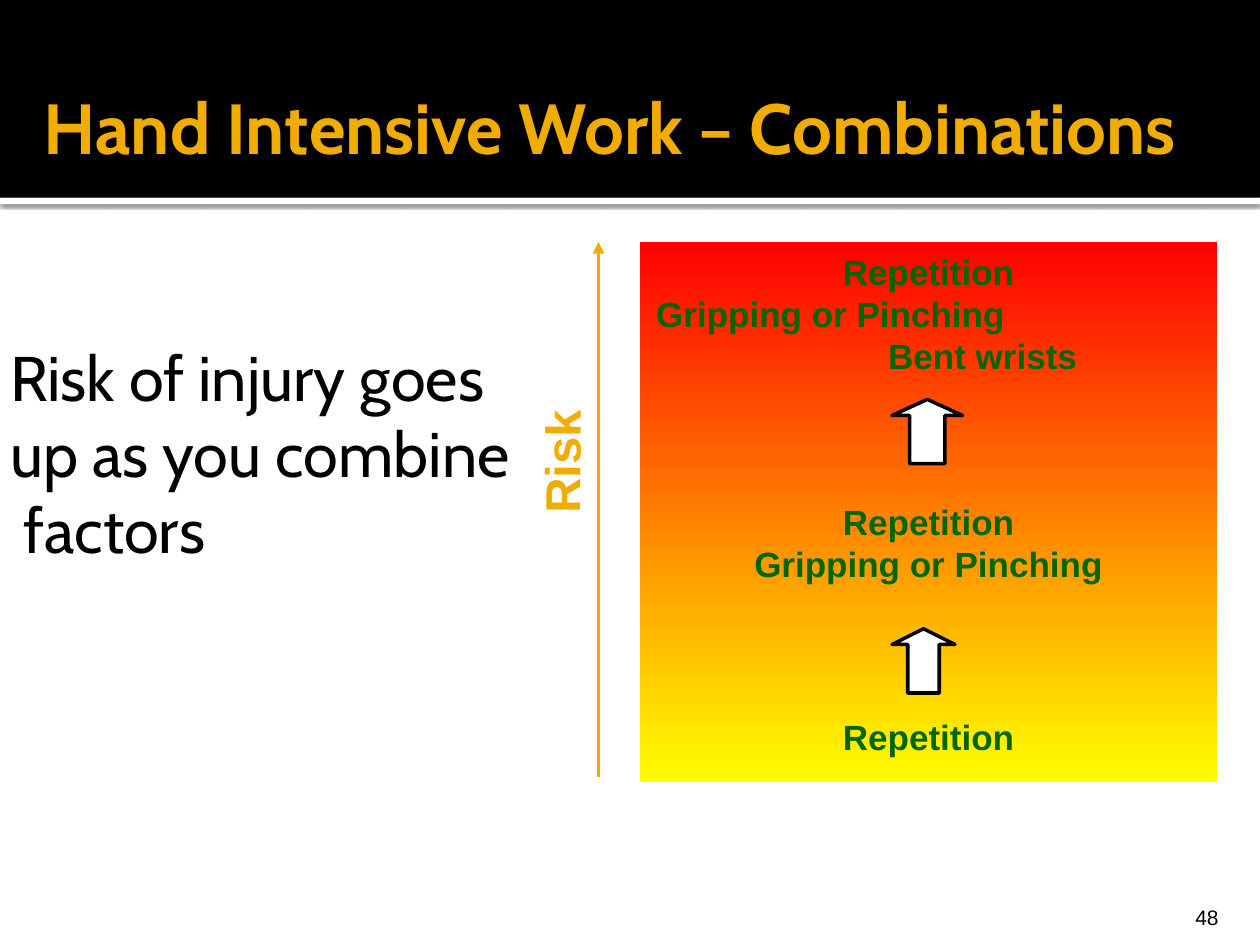
from pptx import Presentation
from pptx.dml.color import RGBColor
from pptx.enum.shapes import MSO_CONNECTOR, MSO_SHAPE
from pptx.enum.text import MSO_ANCHOR, PP_ALIGN
from pptx.oxml import parse_xml
from pptx.oxml.ns import nsdecls
from pptx.util import Inches, Pt

BLACK = RGBColor(0, 0, 0)
WHITE = RGBColor(255, 255, 255)
GOLD = RGBColor(0xF0, 0xAD, 0x00)
GREEN = RGBColor(0x00, 0x66, 0x00)
RED = RGBColor(255, 0, 0)
YELLOW = RGBColor(255, 255, 0)
LEFT, MID, RIGHT = PP_ALIGN.LEFT, PP_ALIGN.CENTER, PP_ALIGN.RIGHT

# Content: a line is (text, alignment, left indent in inches)
TITLE = [("Hand Intensive Work – Combinations", LEFT, 0)]
BODY = [("Risk of injury goes up as you combine", LEFT, 0),
        ("factors", LEFT, 0.11)]
RISK = [("Risk", MID, 0)]
NUMBER = [("48", RIGHT, 0)]
PANEL = (5.08, 1.92, 4.58, 4.29)
LEVELS = [  # top, lines
    (1.99, [("Repetition", MID, 0),
            ("Gripping or Pinching", LEFT, 0.03),
            ("Bent wrists", LEFT, 1.87)]),
    (3.97, [("Repetition", MID, 0), ("Gripping or Pinching", MID, 0)]),
    (5.68, [("Repetition", MID, 0)]),
]
STEPS = [(7.08, 4.99, 0.5, 0.51), (7.08, 3.17, 0.56, 0.51)]

prs = Presentation()
prs.slide_width, prs.slide_height = Inches(10), Inches(7.5)
slide = prs.slides.add_slide(prs.slide_layouts[6])
shapes = slide.shapes


def add_text(lines, box, size, color, font="Arial", bold=False, pitch=None,
             anchor=MSO_ANCHOR.TOP, pads=(0.1, 0.05, 0.1, 0.05), turn=0):
    item = shapes.add_textbox(*map(Inches, box))
    item.rotation = turn
    frame = item.text_frame
    frame.word_wrap = True
    frame.vertical_anchor = anchor
    (frame.margin_left, frame.margin_top,
     frame.margin_right, frame.margin_bottom) = map(Inches, pads)
    for i, (text, align, indent) in enumerate(lines):
        para = frame.add_paragraph() if i else frame.paragraphs[0]
        para.alignment = align
        if pitch:
            para.line_spacing = Pt(pitch)
        if indent:
            para._p.get_or_add_pPr().set("marL", str(Inches(indent)))
        run = para.add_run()
        run.text = text
        run.font.name, run.font.size, run.font.bold = font, Pt(size), bold
        run.font.color.rgb = color


def add_block(kind, box, fill, line=None):
    item = shapes.add_shape(kind, *map(Inches, box))
    item.shadow.inherit = False
    item.fill.solid()
    item.fill.fore_color.rgb = fill
    if line is None:
        item.line.fill.background()
    else:
        item.line.color.rgb, item.line.width = line, Pt(2)
    return item


# Header band with a shadowed white strip
strip = add_block(MSO_SHAPE.RECTANGLE, (0, 1.57, 10, 0.05), WHITE)
strip._element.spPr.find("{*}effectLst").append(parse_xml(
    f'<a:outerShdw {nsdecls("a")} blurRad="{Pt(2.5)}" dist="{Pt(0.8)}" '
    'dir="5400000" algn="tl" rotWithShape="0"><a:srgbClr val="000000">'
    '<a:alpha val="60000"/></a:srgbClr></a:outerShdw>'))
add_block(MSO_SHAPE.RECTANGLE, (0, 0, 10, 1.57), BLACK)
add_text(TITLE, (0.25, 0.67, 9.5, 0.67), 40.5, GOLD, font="Cabin", bold=True,
         anchor=MSO_ANCHOR.MIDDLE, pads=(0.1, 0.05, 0.05, 0.05))

# Slide number and body
add_text(NUMBER, (8.97, 7.08, 0.8, 0.3), 12, BLACK,
         anchor=MSO_ANCHOR.BOTTOM, pads=(0.1, 0.05, 0.1, 0))
add_text(BODY, (0.02, 2.59, 4.16, 3.83), 36, BLACK, font="Cabin",
         pads=(0.06, 0.1, 0.1, 0.05))

# Risk panel, red at the top
panel = add_block(MSO_SHAPE.RECTANGLE, PANEL, RED)
panel.fill.gradient()
panel.fill.gradient_angle = 270
for stop, color, place in zip(panel.fill.gradient_stops, (RED, YELLOW), (0, 1)):
    stop.color.rgb, stop.position = color, place
for top, lines in LEVELS:
    add_text(lines, (PANEL[0], top, PANEL[2], len(lines) / 3), 20, GREEN,
             bold=True, pitch=24, pads=(0.1, 0, 0.1, 0))
for box in STEPS:
    step = add_block(MSO_SHAPE.UP_ARROW, box, WHITE, BLACK)
    step.adjustments[0], step.adjustments[1] = 0.5, 0.25

# Risk axis
axis = shapes.add_connector(MSO_CONNECTOR.STRAIGHT, Inches(4.75), Inches(6.17),
                            Inches(4.75), Inches(1.92))
axis.line.color.rgb, axis.line.width = GOLD, Pt(2.25)
axis.line._get_or_add_ln().append(
    parse_xml(f'<a:tailEnd {nsdecls("a")} type="triangle"/>'))
axis._element.spPr.append(parse_xml(f'<a:effectLst {nsdecls("a")}/>'))
add_text(RISK, (3.62, 3.38, 1.67, 0.57), 28, GOLD, bold=True, turn=270.4)

prs.save("out.pptx")
